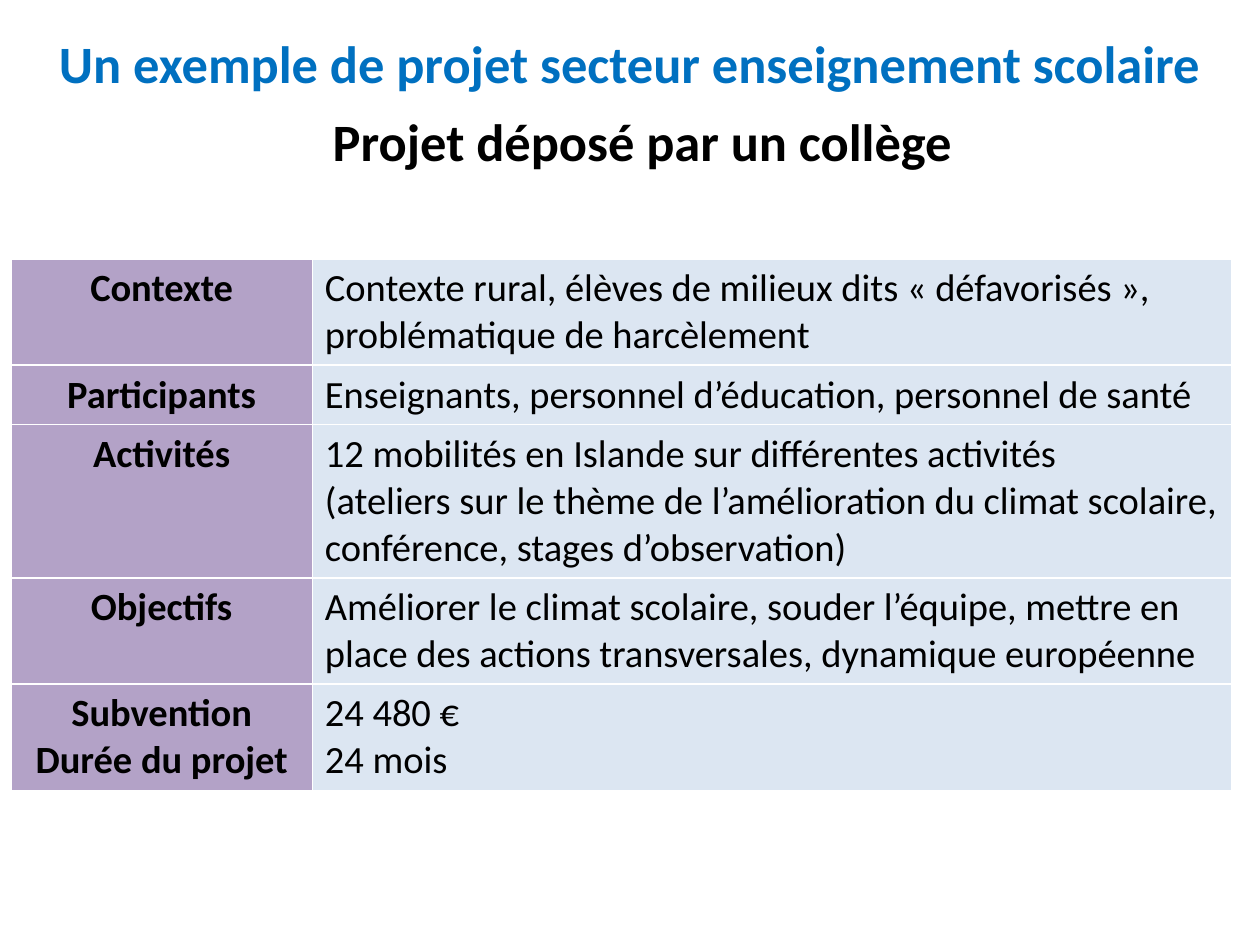
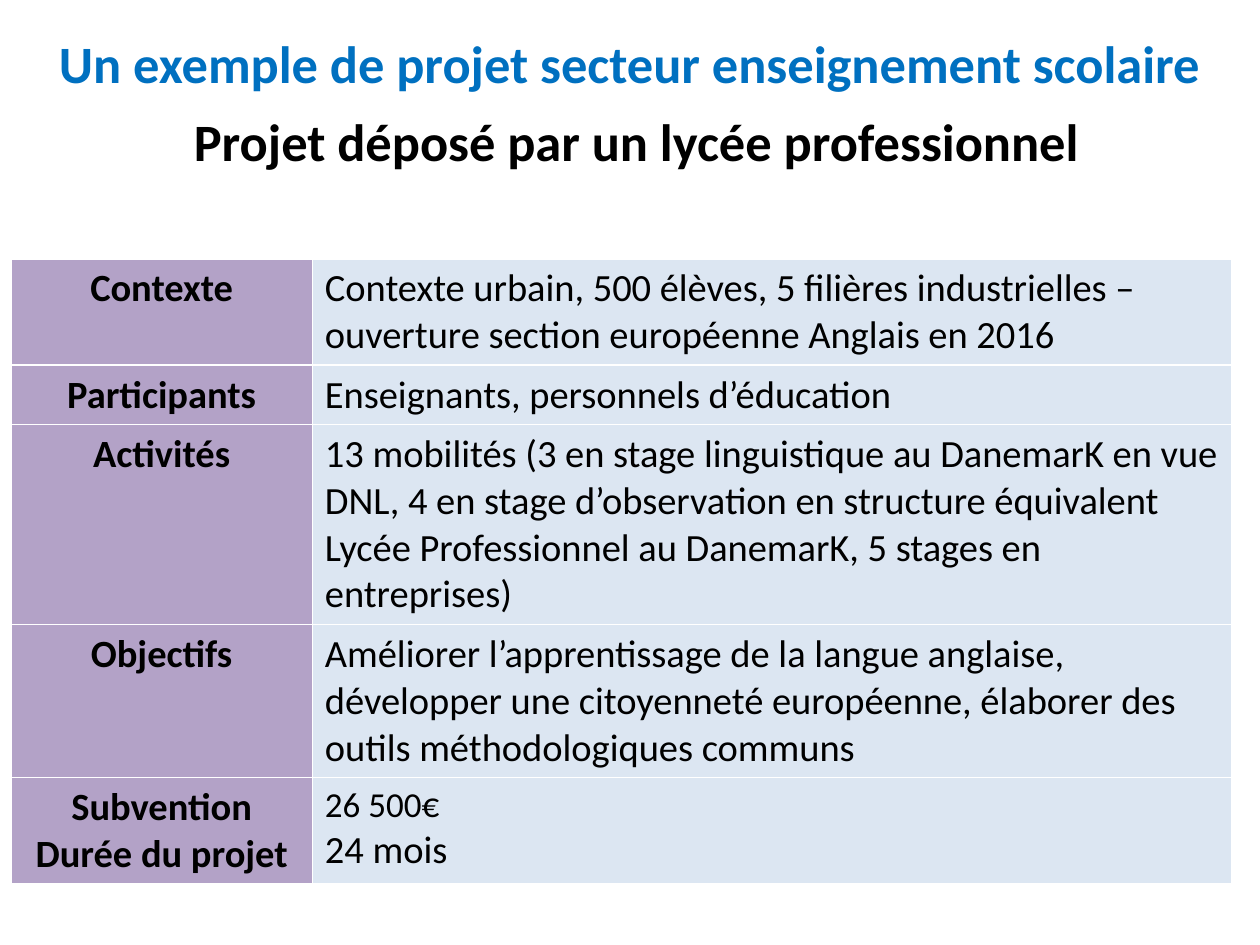
from pptx import Presentation
from pptx.dml.color import RGBColor
from pptx.enum.text import MSO_ANCHOR, MSO_AUTO_SIZE, PP_ALIGN
from pptx.util import Pt

HEADING = "Un exemple de projet secteur enseignement scolaire"
LABELS = [
    ["Contexte"],
    ["Participants"],
    ["Activités"],
    ["Objectifs"],
    ["Subvention", "Durée du projet"],
]
PROJECTS = [
    {
        "subtitle": "Projet déposé par un collège",
        "details": [
            ["Contexte rural, élèves de milieux dits « défavorisés », "
             "problématique de harcèlement"],
            ["Enseignants, personnel d’éducation, personnel de santé"],
            ["12 mobilités en Islande sur différentes activités",
             "(ateliers sur le thème de l’amélioration du climat scolaire, "
             "conférence, stages d’observation)"],
            ["Améliorer le climat scolaire, souder l’équipe, mettre en place "
             "des actions transversales, dynamique européenne"],
            ["24 480 €", "24 mois"],
        ],
        "grant_size": 22,
    },
    {
        "subtitle": "Projet déposé par un lycée professionnel ",
        "details": [
            ["Contexte urbain, 500 élèves, 5 filières industrielles – "
             "ouverture section européenne Anglais en 2016"],
            ["Enseignants, personnels d’éducation"],
            ["13 mobilités (3 en stage linguistique au DanemarK en vue DNL, "
             "4 en stage d’observation en structure équivalent Lycée "
             "Professionnel au DanemarK, 5 stages en entreprises)"],
            ["Améliorer l’apprentissage de la langue anglaise, développer une "
             "citoyenneté européenne, élaborer des outils méthodologiques "
             "communs"],
            ["26 500€", "24 mois"],
        ],
        "grant_size": 20,
    },
]

BLACK = RGBColor(0x00, 0x00, 0x00)
BLUE = RGBColor(0x00, 0x70, 0xC0)
PURPLE = RGBColor(0xB3, 0xA2, 0xC7)
PALE_BLUE = RGBColor(0xDC, 0xE6, 0xF2)

SLIDE_WIDTH, SLIDE_HEIGHT = 720, 540
HEADING_BOX = (0, 14.4, SLIDE_WIDTH, 44)
SUBTITLE_BOX = (53.3, 59, 627.8, 94.3)
TABLE_LEFT, TABLE_TOP = 6.2, 147.9
COLUMN_WIDTHS = (172.3, 525.2)
ROW_HEIGHT = 29.5

HEADING_FONT = {"name": "Calibri", "size": Pt(30), "bold": True}
CELL_FONT = {"name": "Calibri", "size": Pt(22)}
COLUMN_STYLES = [
    {"fill": PURPLE, "alignment": PP_ALIGN.CENTER, "bold": True},
    {"fill": PALE_BLUE, "alignment": PP_ALIGN.LEFT, "bold": False},
]


def write_lines(text_frame, lines, alignment, font_values):
    text_frame.text = "\n".join(lines)
    for paragraph in text_frame.paragraphs:
        paragraph.alignment = alignment
        for run in paragraph.runs:
            for name, value in font_values.items():
                if name == "color":
                    run.font.color.rgb = value
                else:
                    setattr(run.font, name, value)


def format_heading(shape, box, text, color):
    shape.left, shape.top, shape.width, shape.height = map(Pt, box)
    text_frame = shape.text_frame
    text_frame.word_wrap = True
    text_frame.auto_size = MSO_AUTO_SIZE.NONE
    text_frame.vertical_anchor = MSO_ANCHOR.TOP
    write_lines(text_frame, [text], PP_ALIGN.CENTER,
                {**HEADING_FONT, "color": color})


def add_project_table(slide, project):
    rows = list(zip(LABELS, project["details"]))
    table = slide.shapes.add_table(
        len(rows), len(COLUMN_WIDTHS), Pt(TABLE_LEFT), Pt(TABLE_TOP),
        Pt(sum(COLUMN_WIDTHS)), Pt(ROW_HEIGHT * len(rows))).table
    table.horz_banding = False
    for column, width in zip(table.columns, COLUMN_WIDTHS):
        column.width = Pt(width)
    for row, row_lines in zip(table.rows, rows):
        row.height = Pt(ROW_HEIGHT)
        for cell, lines, style in zip(row.cells, row_lines, COLUMN_STYLES):
            cell.fill.solid()
            cell.fill.fore_color.rgb = style["fill"]
            write_lines(cell.text_frame, lines, style["alignment"],
                        {**CELL_FONT, "bold": style["bold"], "color": BLACK})
    grant = table.cell(len(rows) - 1, 1).text_frame.paragraphs[0]
    grant.runs[0].font.size = Pt(project["grant_size"])


def add_project_slide(presentation, project):
    slide = presentation.slides.add_slide(presentation.slide_layouts[5])
    format_heading(slide.shapes.title, HEADING_BOX, HEADING, BLUE)
    subtitle = slide.shapes.add_textbox(*map(Pt, SUBTITLE_BOX))
    format_heading(subtitle, SUBTITLE_BOX, project["subtitle"], BLACK)
    add_project_table(slide, project)


def main():
    presentation = Presentation()
    presentation.slide_width = Pt(SLIDE_WIDTH)
    presentation.slide_height = Pt(SLIDE_HEIGHT)
    for project in PROJECTS:
        add_project_slide(presentation, project)
    presentation.save("out.pptx")


if __name__ == "__main__":
    main()
